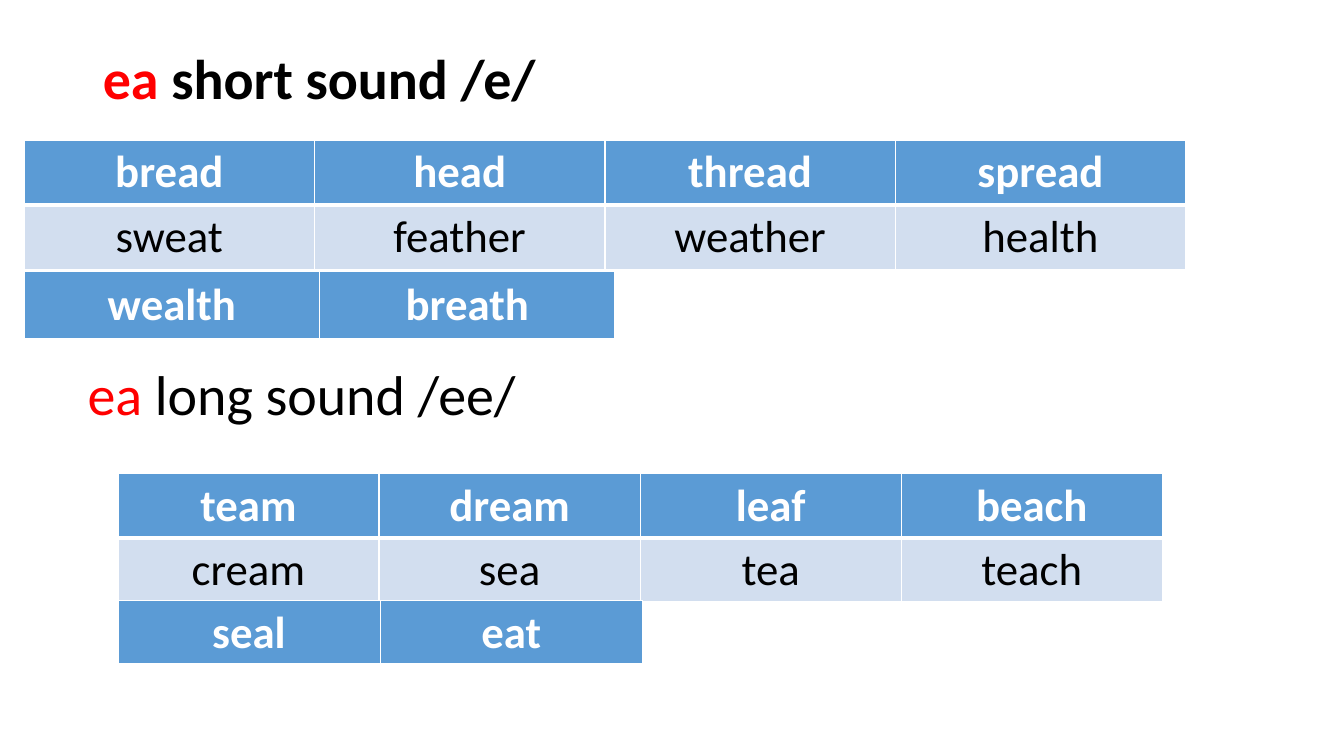
import pptx
import pptx.util
import pptx.dml.color
import pptx.enum.text
import pptx.oxml
import pptx.oxml.ns

Inches = pptx.util.Inches
Pt = pptx.util.Pt

COLORS = {
    "white": "FFFFFF",
    "black": "000000",
    "red": "FF0000",
    "header": "5B9BD5",
    "body": "D2DEEF",
}
FONT = "Calibri"


def rgb(name):
    return pptx.dml.color.RGBColor.from_string(COLORS[name])


def add_run(paragraph, text, size, color, bold):
    run = paragraph.add_run()
    run.text = text
    run.font.name = FONT
    run.font.size = Pt(size)
    run.font.bold = bold
    run.font.color.rgb = rgb(color)


def write_heading(shape, sound, bold):
    paragraph = shape.text_frame.paragraphs[0]
    add_run(paragraph, "ea", 40, "red", bold)
    add_run(paragraph, sound, 40, "black", bold)
    return paragraph


def add_title(slide):
    title = slide.shapes.title
    title.left, title.top = Inches(0.92), Inches(0.4)
    title.width, title.height = Inches(11.5), Inches(1.45)
    frame = title.text_frame
    frame.vertical_anchor = pptx.enum.text.MSO_ANCHOR.TOP
    frame.margin_top = Inches(0.11)
    paragraph = write_heading(title, " short sound /e/", True)
    paragraph.alignment = pptx.enum.text.PP_ALIGN.LEFT
    paragraph.line_spacing = 0.9


def add_long_sound_heading(slide):
    box = slide.shapes.add_textbox(
        Inches(0.77), Inches(3.52), Inches(11.93), Inches(0.77))
    box.text_frame.word_wrap = True
    write_heading(box, " long sound /ee/", False)


def set_borders(cell, top, bottom):
    properties = cell._tc.get_or_add_tcPr()
    widths = {"lnL": 1, "lnR": 1, "lnT": top, "lnB": bottom}
    for index, (side, width) in enumerate(widths.items()):
        border = pptx.oxml.parse_xml(
            f'<a:{side} {pptx.oxml.ns.nsdecls("a")} w="{Pt(width)}">'
            f'<a:solidFill><a:srgbClr val="{COLORS["white"]}"/></a:solidFill>'
            f'</a:{side}>')
        properties.insert(index, border)


def fill_cell(cell, word, is_header):
    cell.fill.solid()
    cell.fill.fore_color.rgb = rgb("header" if is_header else "body")
    cell.vertical_anchor = pptx.enum.text.MSO_ANCHOR.MIDDLE
    paragraph = cell.text_frame.paragraphs[0]
    paragraph.alignment = pptx.enum.text.PP_ALIGN.CENTER
    add_run(paragraph, word, 32, "white" if is_header else "black", is_header)
    set_borders(cell, *((1, 3) if is_header else (3, 1)))


def add_word_table(slide, left, top, column_width, row_height, rows):
    column_count = len(rows[0])
    table = slide.shapes.add_table(
        len(rows), column_count, Inches(left), Inches(top),
        Inches(column_width * column_count),
        Inches(row_height * len(rows))).table
    for row_index, words in enumerate(rows):
        for column_index, word in enumerate(words):
            fill_cell(table.cell(row_index, column_index), word, row_index == 0)


def main():
    presentation = pptx.Presentation()
    presentation.slide_width = Inches(13.33)
    presentation.slide_height = Inches(7.5)
    slide = presentation.slides.add_slide(presentation.slide_layouts[5])

    add_title(slide)
    add_word_table(slide, 0.24, 1.39, 2.88, 0.63, [
        ["bread", "head", "thread", "spread"],
        ["sweat", "feather", "weather", "health"],
    ])
    add_long_sound_heading(slide)
    add_word_table(slide, 1.17, 4.7, 2.59, 0.63, [
        ["team", "dream", "leaf", "beach"],
        ["cream", "sea", "tea", "teach"],
    ])
    add_word_table(slide, 0.24, 2.69, 2.93, 0.68, [["wealth", "breath"]])
    add_word_table(slide, 1.17, 5.96, 2.6, 0.62, [["seal", "eat"]])

    presentation.save("out.pptx")


if __name__ == "__main__":
    main()
